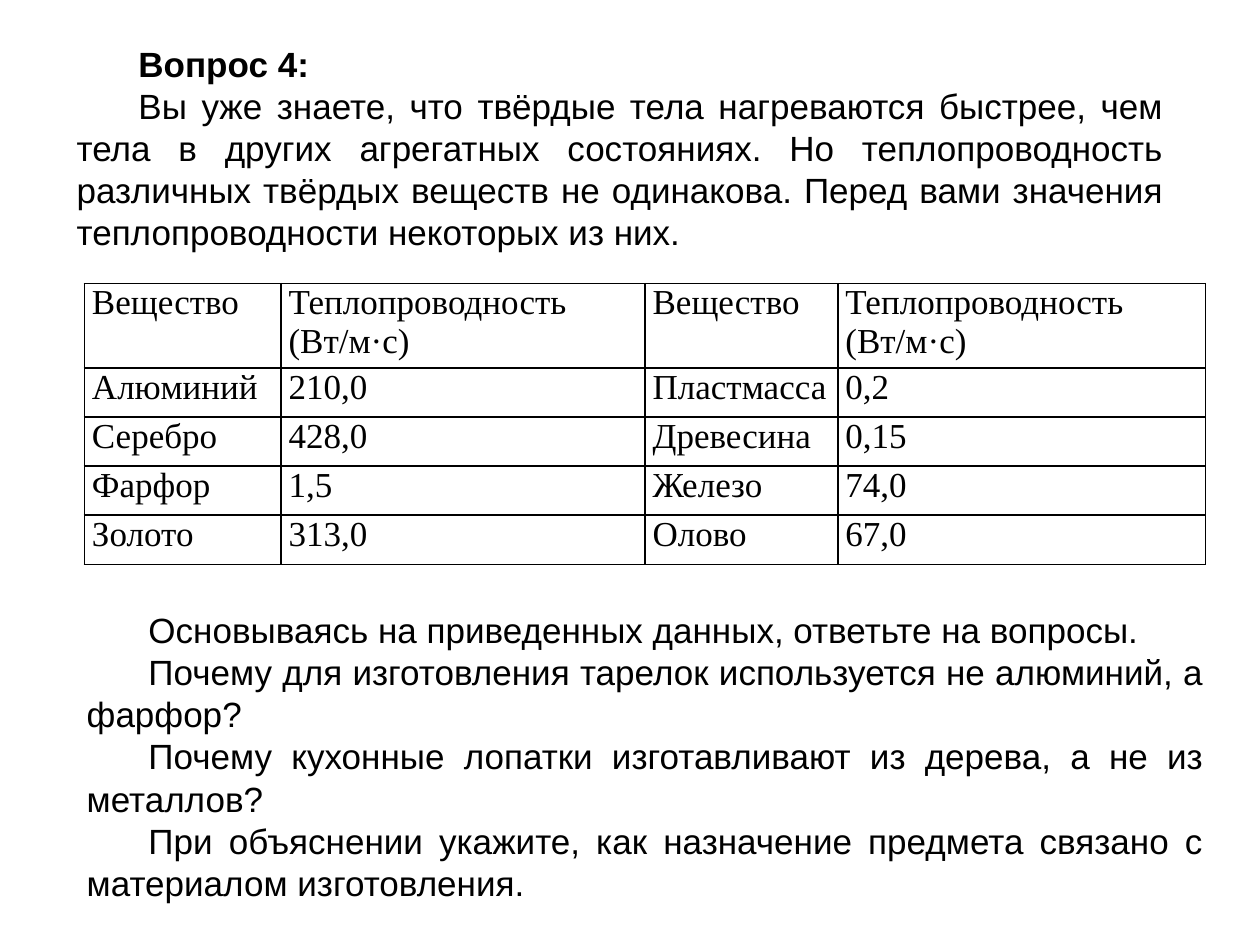
from lxml import etree
from pptx import Presentation, util as u
from pptx.dml.color import RGBColor
from pptx.enum import text
from pptx.oxml.ns import qn

# Content
HEADING = "Вопрос 4:"
INTRO = ("Вы уже знаете, что твёрдые тела нагреваются быстрее, чем тела в других "
         "агрегатных состояниях. Но теплопроводность различных твёрдых веществ не "
         "одинакова. Перед вами значения теплопроводности некоторых из них.")
QUESTIONS = [
    "Основываясь на приведенных данных, ответьте на вопросы.",
    "Почему для изготовления тарелок используется не алюминий, а фарфор?",
    "Почему кухонные лопатки изготавливают из дерева, а не из металлов?",
    "При объяснении укажите, как назначение предмета связано с материалом изготовления.",
]
HEADERS = ["Вещество", "Теплопроводность (Вт/м·с)"] * 2
SUBSTANCES = [
    ["Алюминий", "210,0", "Пластмасса", "0,2"],
    ["Серебро", "428,0", "Древесина", "0,15"],
    ["Фарфор", "1,5", "Железо", "74,0"],
    ["Золото", "313,0", "Олово", "67,0"],
]

# Layout in inches
INTRO_AREA = (0.51, 0.29, 8.82, 1.78)
TABLE_ORIGIN = (0.67, 2.25)
QUESTION_AREA = (0.59, 4.77, 9.06, 2.46)
COLUMNS = [1.56, 2.89, 1.53, 2.92]
ROWS = [0.67] + [0.39] * len(SUBSTANCES)
INDENT = 0.49
INK = "000000"


def color(value):
    return RGBColor.from_string(value)


def write(para, words, font, bold=False):
    para.alignment = text.PP_ALIGN.JUSTIFY
    span = para.add_run()
    span.text = words
    for name, value in {"name": font, "size": u.Pt(20), "bold": bold}.items():
        setattr(span.font, name, value)
    span.font.color.rgb = color(INK)


def add_text(page, area, lines, anchor):
    """Add a box of justified paragraphs; lines holds (words, bold) pairs."""
    box = page.shapes.add_textbox(*map(u.Inches, area))
    frame = box.text_frame
    settings = {"word_wrap": True, "vertical_anchor": anchor,
                "auto_size": text.MSO_AUTO_SIZE.SHAPE_TO_FIT_TEXT}
    for name, value in settings.items():
        setattr(frame, name, value)
    for index, (words, bold) in enumerate(lines):
        para = frame.add_paragraph() if index else frame.paragraphs[0]
        para._p.get_or_add_pPr().set("indent", str(u.Inches(INDENT)))
        write(para, words, "Arial", bold)


def add_borders(cell):
    props = cell._tc.get_or_add_tcPr()
    for side in ("lnL", "lnR", "lnT", "lnB"):
        line = etree.SubElement(props, qn(f"a:{side}"), w=str(u.Pt(1)))
        fill = etree.SubElement(line, qn("a:solidFill"))
        etree.SubElement(fill, qn("a:srgbClr"), val=INK)


def add_data_table(page):
    grid = [HEADERS] + SUBSTANCES
    size = (sum(COLUMNS), sum(ROWS))
    table = page.shapes.add_table(len(ROWS), len(COLUMNS),
                                  *map(u.Inches, TABLE_ORIGIN + size)).table
    table.first_row = table.horz_banding = False
    for column, width in zip(table.columns, COLUMNS):
        column.width = u.Inches(width)
    for row, height, values in zip(table.rows, ROWS, grid):
        row.height = u.Inches(height)
        for cell, words in zip(row.cells, values):
            margins = {"left": 0.06, "right": 0.06, "top": 0, "bottom": 0}
            for side, margin in margins.items():
                setattr(cell, f"margin_{side}", u.Inches(margin))
            add_borders(cell)
            cell.fill.background()
            write(cell.text_frame.paragraphs[0], words, "Times New Roman")


def main():
    deck = Presentation()
    deck.slide_width, deck.slide_height = u.Inches(10), u.Inches(7.5)
    page = deck.slides.add_slide(deck.slide_layouts[6])
    # Questions, data table, introduction
    add_text(page, QUESTION_AREA, [(words, False) for words in QUESTIONS],
             text.MSO_ANCHOR.MIDDLE)
    add_data_table(page)
    add_text(page, INTRO_AREA, [(HEADING, True), (INTRO, False)],
             text.MSO_ANCHOR.TOP)
    deck.save("out.pptx")


if __name__ == "__main__":
    main()
